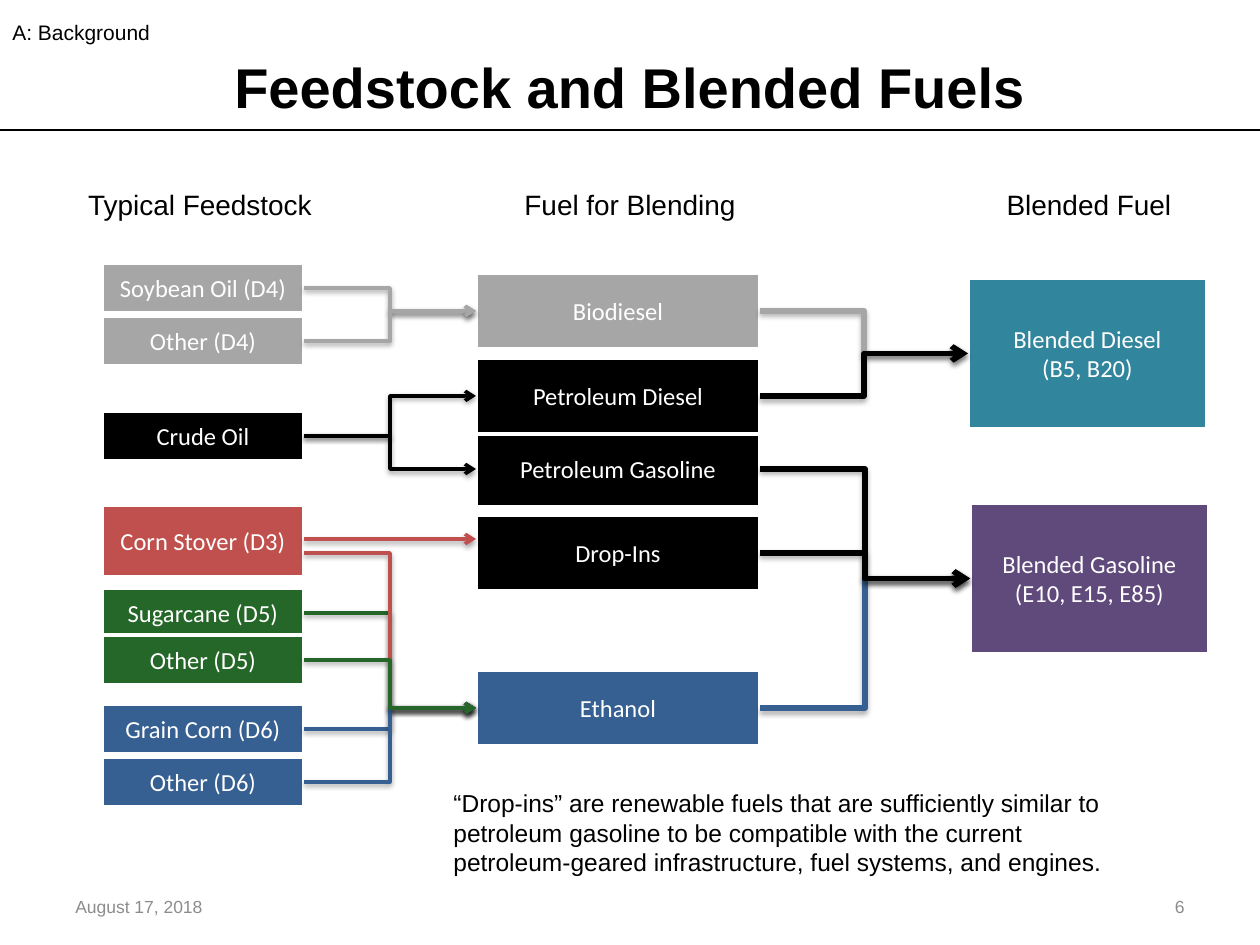
from lxml.etree import SubElement
from pptx import Presentation
from pptx.dml.color import RGBColor
from pptx.enum.shapes import MSO_CONNECTOR, MSO_SHAPE
from pptx.enum.text import MSO_ANCHOR, MSO_AUTO_SIZE, PP_ALIGN
from pptx.oxml.ns import qn
from pptx.util import Pt

EMU_PER_PIXEL = 914400 / 126
BLACK, WHITE, GRAY = "000000", "FFFFFF", "A6A6A6"
RED, GREEN, BLUE = "C0504D", "256728", "376092"
TEAL, PURPLE, FOOTER = "31859C", "604A7B", "8C8C8C"
LEFT_SITE, RIGHT_SITE = 1, 3


def px(length):
    return round(length * EMU_PER_PIXEL)


def color(value):
    return RGBColor.from_string(value)


class FlowSlide:
    text_font = "Arial"
    box_font = "Calibri"
    box_size = 14

    def __init__(self, slide):
        self.slide = slide
        self.boxes = {}

    def add_lines(self, frame, lines, size, font, ink, align, bold=False):
        for index, line in enumerate(lines):
            paragraph = frame.paragraphs[0] if index == 0 else frame.add_paragraph()
            paragraph.alignment = align
            run = paragraph.add_run()
            run.text = line
            run.font.name = font
            run.font.size = Pt(size)
            run.font.bold = bold
            run.font.color.rgb = color(ink)

    def title(self, text, left, top, width, height):
        shape = self.slide.shapes.title
        shape.left, shape.top = px(left), px(top)
        shape.width, shape.height = px(width), px(height)
        frame = shape.text_frame
        frame.auto_size = MSO_AUTO_SIZE.NONE
        frame.vertical_anchor = MSO_ANCHOR.BOTTOM
        self.add_lines(frame, [text], 32, self.text_font, BLACK, PP_ALIGN.CENTER, True)

    def text(self, text, left, top, width, height, size, align=PP_ALIGN.LEFT,
             ink=BLACK, anchor=MSO_ANCHOR.TOP, wrap=True, spacing=None):
        shape = self.slide.shapes.add_textbox(px(left), px(top), px(width), px(height))
        frame = shape.text_frame
        frame.word_wrap = wrap
        frame.vertical_anchor = anchor
        self.add_lines(frame, [text], size, self.text_font, ink, align)
        frame.paragraphs[0].line_spacing = spacing

    def box(self, name, lines, left, top, width, height, fill):
        shape = self.slide.shapes.add_shape(
            MSO_SHAPE.RECTANGLE, px(left), px(top), px(width), px(height))
        shape.shadow.inherit = False
        shape.fill.solid()
        shape.fill.fore_color.rgb = color(fill)
        shape.line.color.rgb = color(WHITE)
        shape.line.width = Pt(2)
        frame = shape.text_frame
        frame.word_wrap = True
        frame.vertical_anchor = MSO_ANCHOR.MIDDLE
        self.add_lines(frame, lines, self.box_size, self.box_font, WHITE, PP_ALIGN.CENTER)
        self.boxes[name] = shape

    def line(self, kind, start, end, ink, width):
        connector = self.slide.shapes.add_connector(kind, *start, *end)
        connector.line.color.rgb = color(ink)
        connector.line.width = Pt(width)
        effects = SubElement(connector._element.spPr, qn("a:effectLst"))
        return connector, effects

    def rule(self, left, right, y):
        self.line(MSO_CONNECTOR.STRAIGHT, (px(left), px(y)), (px(right), px(y)), BLACK, 0.75)

    def arrow(self, kind, start, end, ink, width):
        connector, effects = self.line(kind, start, end, ink, width)
        outline = connector._element.spPr.find(qn("a:ln"))
        SubElement(outline, qn("a:tailEnd"), type="arrow")
        distance, alpha = (23000, 35000) if width == 3 else (20000, 38000)
        shadow = SubElement(effects, qn("a:outerShdw"), blurRad="40000",
                            dist=str(distance), dir="5400000", rotWithShape="0")
        shade = SubElement(shadow, qn("a:srgbClr"), val=BLACK)
        SubElement(shade, qn("a:alpha"), val=str(alpha))
        return connector

    def link(self, source_name, target_name, ink, width):
        source, target = self.boxes[source_name], self.boxes[target_name]
        start = source.left + source.width, source.top + source.height // 2
        end = target.left, target.top + target.height // 2
        connector = self.arrow(MSO_CONNECTOR.ELBOW, start, end, ink, width)
        connector.begin_connect(source, RIGHT_SITE)
        connector.end_connect(target, LEFT_SITE)


def main():
    presentation = Presentation()
    presentation.slide_width, presentation.slide_height = px(1260), px(945)
    flow = FlowSlide(presentation.slides.add_slide(presentation.slide_layouts[5]))

    flow.rule(0, 1260, 130)
    flow.title("Feedstock and Blended Fuels", 21, 10, 1218, 116)
    flow.text("A: Background", 0, 1, 164, 47, 12, wrap=False, spacing=1.5)
    for heading, left, width in [("Typical Feedstock", 53, 294),
                                 ("Fuel for Blending", 388, 484),
                                 ("Blended Fuel", 968, 242)]:
        flow.text(heading, left, 181, width, 47, 16, PP_ALIGN.CENTER)

    for name, top, height, fill in [
        ("Soybean Oil (D4)", 263, 50, GRAY),
        ("Other (D4)", 316, 50, GRAY),
        ("Crude Oil", 411, 50, BLACK),
        ("Corn Stover (D3)", 505, 72, RED),
        ("Sugarcane (D5)", 588, 50, GREEN),
        ("Other (D5)", 635, 50, GREEN),
        ("Grain Corn (D6)", 704, 50, BLUE),
        ("Other (D6)", 757, 50, BLUE),
    ]:
        flow.box(name, [name], 102, top, 202, height, fill)

    for name, top, fill in [
        ("Biodiesel", 273, GRAY),
        ("Petroleum Gasoline", 431, BLACK),
        ("Petroleum Diesel", 358, BLACK),
        ("Drop-Ins", 515, BLACK),
        ("Ethanol", 670, BLUE),
    ]:
        flow.box(name, [name], 476, top, 284, 76, fill)

    for name, blends, left, top, fill in [
        ("Blended Diesel", "(B5, B20)", 968, 278, TEAL),
        ("Blended Gasoline", "(E10, E15, E85)", 970, 503, PURPLE),
    ]:
        flow.box(name, [name, blends], left, top, 239, 151, fill)

    for source, target, ink, width in [
        ("Crude Oil", "Petroleum Gasoline", BLACK, 2),
        ("Crude Oil", "Petroleum Diesel", BLACK, 2),
        ("Ethanol", "Blended Gasoline", BLUE, 3),
        ("Petroleum Gasoline", "Blended Gasoline", BLACK, 3),
        ("Drop-Ins", "Blended Gasoline", BLACK, 3),
        ("Biodiesel", "Blended Diesel", GRAY, 3),
        ("Petroleum Diesel", "Blended Diesel", BLACK, 3),
        ("Soybean Oil (D4)", "Biodiesel", GRAY, 2),
        ("Other (D4)", "Biodiesel", GRAY, 2),
        ("Grain Corn (D6)", "Ethanol", BLUE, 2),
        ("Sugarcane (D5)", "Ethanol", GREEN, 2),
    ]:
        flow.link(source, target, ink, width)
    for kind, start_y, end_y in [(MSO_CONNECTOR.ELBOW, 553, 708),
                                 (MSO_CONNECTOR.STRAIGHT, 539, 539)]:
        flow.arrow(kind, (px(304), px(start_y)), (px(476), px(end_y)), RED, 2)
    flow.link("Other (D6)", "Ethanol", BLUE, 2)
    flow.link("Other (D5)", "Ethanol", GREEN, 2)

    flow.text("“Drop-ins” are renewable fuels that are sufficiently similar to petroleum "
              "gasoline to be compatible with the current petroleum-geared "
              "infrastructure, fuel systems, and engines.", 441, 782, 714, 102, 14)
    flow.text("August 17, 2018", 63, 882, 441, 50, 10, ink=FOOTER, anchor=MSO_ANCHOR.MIDDLE)
    flow.text("6", 903, 882, 294, 50, 10, PP_ALIGN.RIGHT, FOOTER, MSO_ANCHOR.MIDDLE)

    presentation.save("out.pptx")


if __name__ == "__main__":
    main()
